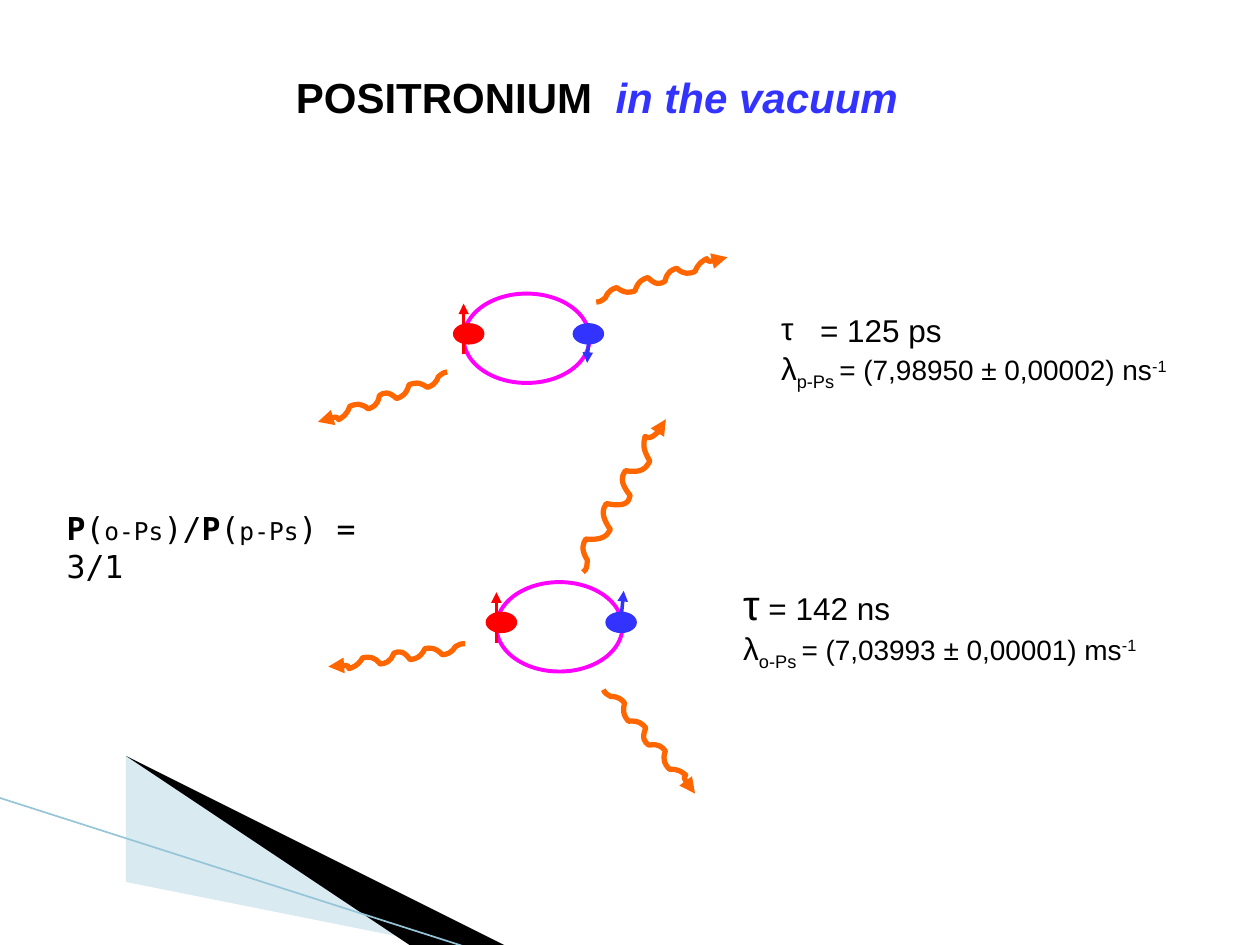
from lxml import etree
from pptx import Presentation
from pptx.dml.color import RGBColor
from pptx.enum.shapes import MSO_CONNECTOR, MSO_SHAPE
from pptx.oxml.ns import qn
from pptx.util import Inches, Pt

OVAL = MSO_SHAPE.OVAL
STRAIGHT = MSO_CONNECTOR.STRAIGHT
COLORS = {"black": "000000", "white": "FFFFFF", "blue": "3333FF", "red": "FF0000",
          "magenta": "FF00FF", "orange": "FF6600", "pale": "A0CBDC", "edge": "97C5D8"}

# Runs: text, size, and optional bold, italic, color, baseline
TEXTS = [
    {"at": (2.25, 0.52, 5.12, 0.51), "font": "Arial", "paragraphs": [
        [("POSITRONIUM  ", 24, {"bold": True}),
         ("in the vacuum", 24, {"bold": True, "italic": True, "color": "blue"})]]},
    {"at": (6.1, 2.42, 3.38, 1.01), "font": "Arial", "bullet": "τ", "paragraphs": [
        [("= 125 ps", 18, {})],
        [("λ", 18, {}), ("p-Ps ", 18, {"baseline": -25}),
         ("= (7,98950 ± 0,00002) ns", 16, {}), ("-1", 16, {"baseline": 30})]]},
    {"at": (5.8, 4.54, 3.46, 0.81), "font": "Arial", "paragraphs": [
        [("τ", 24, {}), (" = 142 ns", 18, {})],
        [("λ", 18, {}), ("o-Ps ", 18, {"baseline": -25}),
         ("= (7,03993 ± 0,00001) ms", 16, {}), ("-1", 16, {"baseline": 30})]]},
    {"at": (0.43, 3.99, 2.65, 0.4), "font": "DejaVu Sans Mono", "paragraphs": [
        [("P", 18, {"bold": True}), ("(", 18, {}), ("o-Ps", 14, {}), (")/", 18, {}),
         ("P", 18, {"bold": True}), ("(", 18, {}), ("p-Ps", 14, {}), (") = 3/1", 18, {})]]},
]

# Atoms: left and top of the orbit, electron spin (start, end) relative to it
ATOMS = [
    (3.68, 2.33, ((1.0, 0.24), (0.98, 0.55))),
    (3.94, 4.62, ((0.98, 0.39), (1.01, 0.07))),
]

# Photons: left, top, width, height, rotation
PHOTONS = [
    (4.7, 2.17, 1.1, 0.08, 342.2),
    (2.49, 3.12, 1.1, 0.08, 160),
    (4.25, 3.85, 1.38, 0.15, 300),
    (2.6, 5.17, 1.1, 0.08, 171.6),
    (4.61, 5.84, 1.1, 0.08, 49.6),
]
# Start point, then two control points and an end point for each curve
WAVE = [(0, 6.5), (3, 7.4), (5, 6.1), (8, 4.8), (12, 0), (16, 0),
        (19, 0), (24, 7), (28, 7.2), (32, 7.4), (37, 0.4), (41, 0.4),
        (45, 0), (49, 7.5), (53, 7.5), (57, 7.2), (61, 0), (65, 0),
        (69, 0.2), (73, 7), (77, 7.2), (82, 7.4), (87, 0.7), (90, 0.7),
        (94, 0), (94, 2.9), (98, 3.2), (101, 4.1), (107, 4.1), (110, 4)]

SWOOSHES = [
    ("pale", 40, [(0.55, 6.51), (5.95, 7.51), (4.56, 7.51), (0.55, 6.5)]),
    ("black", 100, [(0.53, 6.49), (4.57, 7.51), (3.72, 7.52), (0.54, 6.5)]),
]


def rgb(name):
    return RGBColor.from_string(COLORS[name])


def style_line(shape, color, width, arrow=False):
    shape.line.color.rgb = rgb(color)
    shape.line.width = Pt(width)
    if arrow:
        etree.SubElement(shape.line._get_or_add_ln(), qn("a:tailEnd"), type="triangle")


def add_line(page, start, end, color, width, arrow=False):
    line = page.shapes.add_connector(STRAIGHT, *map(Inches, start + end))
    style_line(line, color, width, arrow)
    etree.SubElement(line._element.spPr, qn("a:effectLst"))


def add_oval(page, at, fill, line, width):
    oval = page.shapes.add_shape(OVAL, *map(Inches, at))
    oval.shadow.inherit = False
    oval.fill.solid()
    oval.fill.fore_color.rgb = rgb(fill)
    style_line(oval, line, width)


def add_outline(page, points, scale, close):
    builder = page.shapes.build_freeform(*points[0], scale=scale)
    builder.add_line_segments(points[1:], close=close)
    outline = builder.convert_to_shape()
    outline.shadow.inherit = False
    return outline


def add_swoosh(page, color, opacity, points):
    swoosh = add_outline(page, points, Inches(1), True)
    swoosh.fill.solid()
    swoosh.fill.fore_color.rgb = rgb(color)
    swoosh.line.fill.background()
    if opacity < 100:
        shade = swoosh._element.spPr.find(qn("a:solidFill"))[0]
        etree.SubElement(shade, qn("a:alpha"), val=str(opacity * 1000))


def add_photon(page, left, top, width, height, rotation):
    photon = add_outline(page, WAVE, Inches(0.01), False)
    # Every three straight segments become one Bézier curve
    segments = list(photon._element.iter(qn("a:lnTo")))
    for first in range(0, len(segments) - 2, 3):
        curve = etree.Element(qn("a:cubicBezTo"))
        segments[first].addprevious(curve)
        for segment in segments[first:first + 3]:
            curve.append(segment[0])
            segment.getparent().remove(segment)
    photon.left, photon.top = Inches(left), Inches(top)
    photon.width, photon.height = Inches(width), Inches(height)
    photon.rotation = rotation
    photon.fill.background()
    style_line(photon, "orange", 3, True)


def add_atom(page, left, top, spin):
    add_oval(page, (left, top, 1, 0.71), "white", "magenta", 2.25)
    for offset, color in ((0.87, "blue"), (-0.08, "red")):
        add_oval(page, (left + offset, top + 0.24, 0.24, 0.16), color, color, 0.75)
    add_line(page, (left, top + 0.48), (left, top + 0.08), "red", 2, True)
    start, end = [(left + x, top + y) for x, y in spin]
    add_line(page, start, end, "blue", 2, True)


def add_text(page, item):
    frame = page.shapes.add_textbox(*map(Inches, item["at"])).text_frame
    frame.word_wrap = True
    for index, runs in enumerate(item["paragraphs"]):
        para = frame.add_paragraph() if index else frame.paragraphs[0]
        if index == 0 and "bullet" in item:
            props = para._p.get_or_add_pPr()
            props.set("marL", str(Inches(0.31)))
            props.set("indent", str(-Inches(0.31)))
            etree.SubElement(props, qn("a:buFont"), typeface=item["font"])
            etree.SubElement(props, qn("a:buChar"), char=item["bullet"])
        for text, size, look in runs:
            span = para.add_run()
            span.text = text
            span.font.name = item["font"]
            span.font.size = Pt(size)
            span.font.bold = look.get("bold", False)
            span.font.italic = look.get("italic", False)
            span.font.color.rgb = rgb(look.get("color", "black"))
            if "baseline" in look:
                span._r.get_or_add_rPr().set("baseline", str(look["baseline"] * 1000))


def main():
    deck = Presentation()
    deck.slide_width, deck.slide_height = Inches(10), Inches(7.5)
    page = deck.slides.add_slide(deck.slide_layouts[6])

    # Corner decoration
    for swoosh in SWOOSHES:
        add_swoosh(page, *swoosh)
    add_line(page, (-0.01, 6.33), (3.71, 7.52), "edge", 0.95)

    # Positronium atoms and their photons
    for atom in ATOMS:
        add_atom(page, *atom)
    for photon in PHOTONS:
        add_photon(page, *photon)

    # Title, lifetimes and ratio
    for item in TEXTS:
        add_text(page, item)

    deck.save("out.pptx")


if __name__ == "__main__":
    main()
